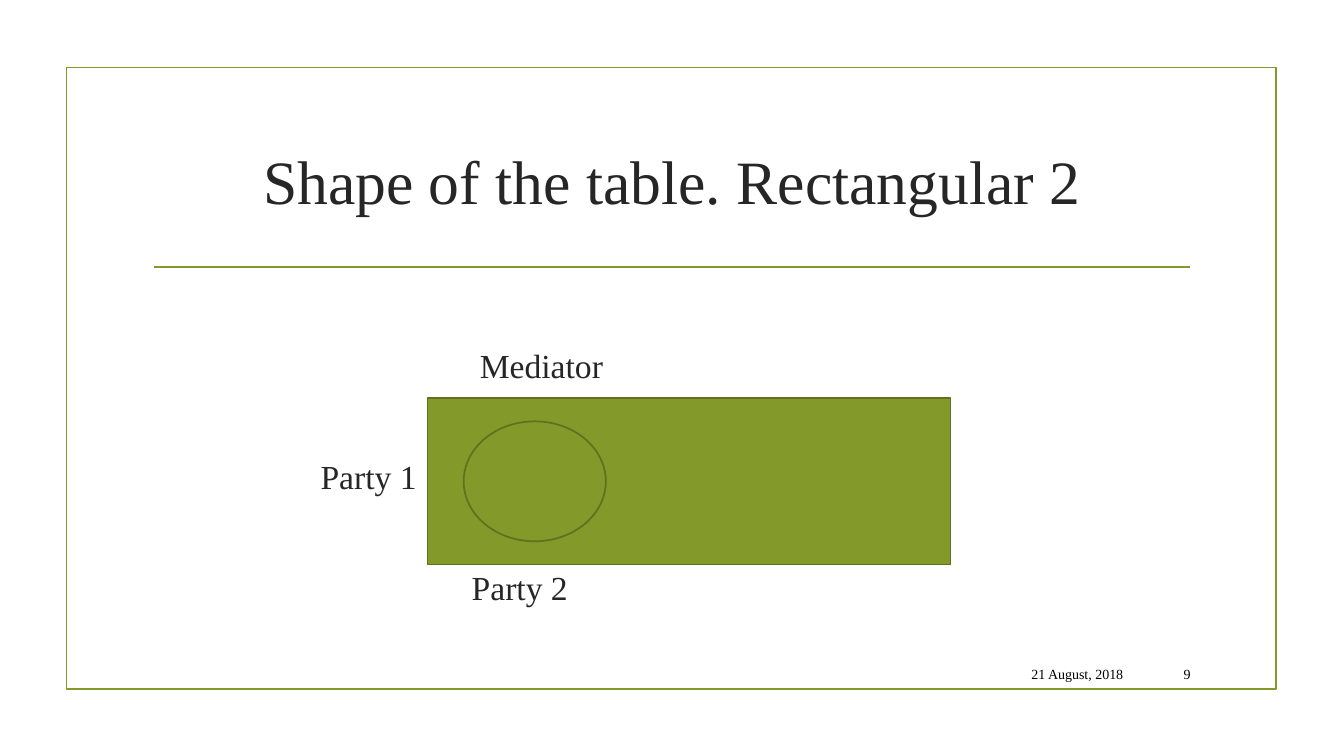
from dataclasses import dataclass

from lxml import etree
from pptx import Presentation
from pptx.dml.color import RGBColor
from pptx.enum.shapes import MSO_CONNECTOR, MSO_SHAPE
from pptx.enum.text import MSO_ANCHOR, MSO_AUTO_SIZE, PP_ALIGN
from pptx.oxml.ns import qn
from pptx.util import Emu, Inches, Pt

RECT, OVAL = MSO_SHAPE.RECTANGLE, MSO_SHAPE.OVAL
LINE = MSO_CONNECTOR.STRAIGHT
LEFT, MID, RIGHT = PP_ALIGN.LEFT, PP_ALIGN.CENTER, PP_ALIGN.RIGHT
CENTRE, FIXED = MSO_ANCHOR.MIDDLE, MSO_AUTO_SIZE.NONE

WIDE, HIGH = Inches(13.33), Inches(7.5)
FONT = "Times New Roman"
GREEN, DARK, INK, BLACK = "83992A", "61711F", "262626", "000000"
STROKE = Pt(1.25)
SEAT_TOP, SEAT_STEP = 44.93, 14.67


@dataclass(frozen=True)
class Box:
    x: float
    y: float
    w: float
    h: float

    def emu(self) -> tuple[Emu, Emu, Emu, Emu]:
        return across(self.x), down(self.y), across(self.w), down(self.h)


@dataclass(frozen=True)
class Form:
    kind: int
    box: Box
    fill: str | None
    line: str


@dataclass(frozen=True)
class Label:
    text: str
    box: Box
    size: int
    hue: str
    align: int
    inset: float


def across(share: float) -> Emu:
    return Emu(round(WIDE * share / 100))


def down(share: float) -> Emu:
    return Emu(round(HIGH * share / 100))


def paint(hue: str) -> RGBColor:
    return RGBColor.from_string(hue)


def draw_form(slide, form: Form) -> None:
    shape = slide.shapes.add_shape(form.kind, *form.box.emu())
    shape.shadow.inherit = False
    if form.fill:
        shape.fill.solid()
        shape.fill.fore_color.rgb = paint(form.fill)
    else:
        shape.fill.background()
    shape.line.color.rgb = paint(form.line)
    shape.line.width = STROKE


def draw_rule(slide, start: float, end: float, y: float) -> None:
    rule = slide.shapes.add_connector(LINE, across(start), down(y), across(end), down(y))
    rule.line.color.rgb = paint(GREEN)
    rule.line.width = STROKE
    etree.SubElement(rule._element.spPr, qn("a:effectLst"))


def set_text(shape, label: Label) -> None:
    shape.left, shape.top, shape.width, shape.height = label.box.emu()
    frame = shape.text_frame
    frame.word_wrap = True
    frame.auto_size = FIXED
    frame.vertical_anchor = CENTRE
    frame.margin_left = frame.margin_right = Inches(label.inset)
    para = frame.paragraphs[0]
    para.alignment = label.align
    run = para.add_run()
    run.text = label.text
    run.font.name = FONT
    run.font.size = Pt(label.size)
    run.font.color.rgb = paint(label.hue)


def draw_label(slide, label: Label) -> None:
    set_text(slide.shapes.add_textbox(*label.box.emu()), label)


def seat(text: str, x: float, row: int) -> Label:
    return Label(text, Box(x, SEAT_TOP + row * SEAT_STEP, 11.25, 6.67), 24, INK, LEFT, 0)


def foot(text: str, x: float, w: float) -> Label:
    return Label(text, Box(x, 87.07, w, 4.13), 10, BLACK, RIGHT, 0.1)


TITLE = Label("Shape of the table. Rectangular 2",
              Box(10.65, 14.27, 78.75, 19.07), 44, INK, MID, 0.1)
FORMS = (
    Form(RECT, Box(4.95, 8.93, 90, 82.27), None, GREEN),
    Form(RECT, Box(31.8, 52.67, 38.93, 22), GREEN, DARK),
    Form(OVAL, Box(34.5, 55.73, 10.58, 15.87), GREEN, DARK),
)
LABELS = (
    seat("Mediator", 35.7, 0),
    seat("Party 1", 23.85, 1),
    seat("Party 2", 35.1, 2),
    foot("21 August, 2018", 71.18, 13.13),
    foot("9", 84.9, 4.43),
)


def main() -> None:
    deck = Presentation()
    deck.slide_width, deck.slide_height = WIDE, HIGH
    slide = deck.slides.add_slide(deck.slide_layouts[5])
    set_text(slide.shapes.title, TITLE)
    for form in FORMS:
        draw_form(slide, form)
    draw_rule(slide, 11.48, 88.58, 35.33)
    for label in LABELS:
        draw_label(slide, label)
    deck.save("out.pptx")


if __name__ == "__main__":
    main()
